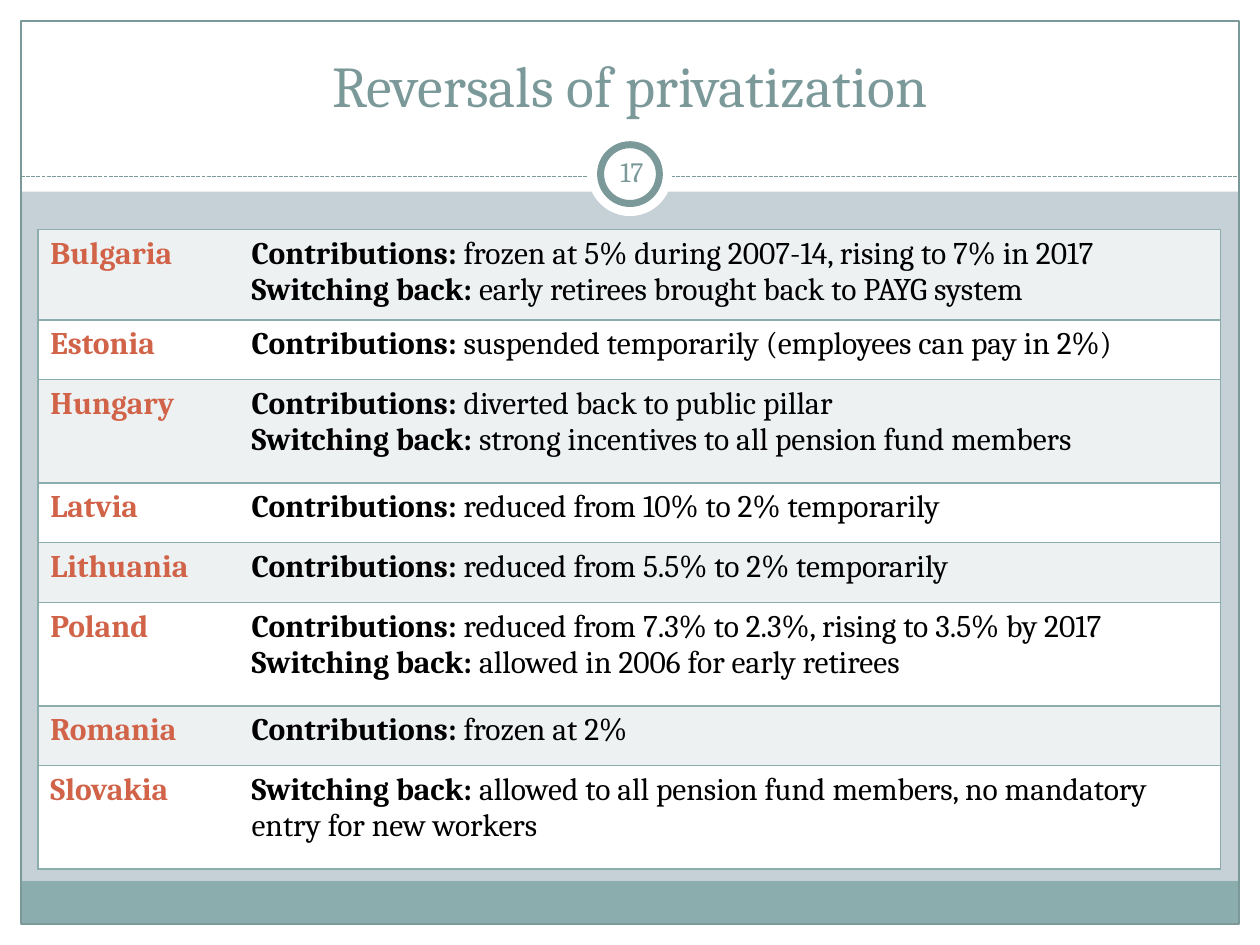
from lxml import etree
from pptx import Presentation
from pptx.dml.color import RGBColor
from pptx.enum import dml, shapes, text
from pptx.oxml import ns
from pptx.util import Pt

WHITE = RGBColor(0xFF, 0xFF, 0xFF)
BLACK = RGBColor(0, 0, 0)
BACKGROUND = RGBColor(0xC5, 0xD1, 0xD7)
TEAL = RGBColor(0x8C, 0xAD, 0xAE)
DARK_TEAL = RGBColor(0x7C, 0x99, 0x9A)
BAND = RGBColor(0xEE, 0xF1, 0xF2)
ORANGE = RGBColor(0xD1, 0x63, 0x49)
FONT = "Cambria"
W, H, EDGE = 720, 540, 12

CONTRIB, SWITCH = "Contributions: ", "Switching back: "
REVERSALS = [
    ("Bulgaria", 51.6, [(CONTRIB, "frozen at 5% during 2007-14, rising to 7% in 2017"),
                        (SWITCH, "early retirees brought back to PAYG system")]),
    ("Estonia", 34.2, [(CONTRIB, "suspended temporarily (employees can pay in 2%)")]),
    ("Hungary", 59, [(CONTRIB, "diverted back to public pillar"),
                     (SWITCH, "strong incentives to all pension fund members")]),
    ("Latvia", 34.2, [(CONTRIB, "reduced from 10% to 2% temporarily")]),
    ("Lithuania", 34.2, [(CONTRIB, "reduced from 5.5% to 2% temporarily")]),
    ("Poland", 59, [(CONTRIB, "reduced from 7.3% to 2.3%, rising to 3.5% by 2017"),
                    (SWITCH, "allowed in 2006 for early retirees")]),
    ("Romania", 34.2, [(CONTRIB, "frozen at 2%")]),
    ("Slovakia", 59, [(SWITCH, "allowed to all pension fund members, "
                               "no mandatory entry for new workers")]),
]


def add_run(p, words, size=18, color=BLACK, bold=False):
    r = p.add_run()
    r.text = words
    r.font.name, r.font.size, r.font.bold = FONT, Pt(size), bold
    r.font.color.rgb = color


def add_box(s, kind, x, y, w, h, fill=None, line=None, width=0.75):
    sp = s.shapes.add_shape(kind, Pt(x), Pt(y), Pt(w), Pt(h))
    sp.shadow.inherit = False
    if fill is None:
        sp.fill.background()
    else:
        sp.fill.solid()
        sp.fill.fore_color.rgb = fill
    if line is None:
        sp.line.fill.background()
    else:
        sp.line.color.rgb = line
        sp.line.width = Pt(width)
    return sp


def add_frame(s, x, y, w, h, header):
    """White margins and header, teal footer bar, thin outline and dashed rule."""
    rect = shapes.MSO_SHAPE.RECTANGLE
    for box in [(x, y + h - EDGE, w, EDGE), (x, y, w, header),
                (x, y, EDGE, h), (x + w - EDGE, y, EDGE, h)]:
        add_box(s, rect, *box, fill=WHITE)
    inner_w = w - 2 * EDGE
    add_box(s, rect, x + EDGE, y + h - EDGE - 24.5, inner_w, 24.5, fill=TEAL)
    add_box(s, rect, x + EDGE, y + EDGE, inner_w, h - 2 * EDGE, line=DARK_TEAL)

    rule_y = Pt(y + header - 8.7)
    rule = s.shapes.add_connector(shapes.MSO_CONNECTOR.STRAIGHT, Pt(x + EDGE), rule_y,
                                  Pt(x + w - EDGE), rule_y)
    rule.line.color.rgb, rule.line.width = DARK_TEAL, Pt(0.75)
    rule.line.dash_style = dml.MSO_LINE.SQUARE_DOT
    etree.SubElement(rule._element.spPr, ns.qn("a:effectLst"))


def add_page_number(s, x, y, size, number):
    oval = shapes.MSO_SHAPE.OVAL
    inset = 7.2
    ring = size - 2 * inset
    add_box(s, oval, x, y, size, size, fill=WHITE)
    add_box(s, oval, x + inset, y + inset, ring, ring, fill=WHITE, line=DARK_TEAL, width=4)
    tb = s.shapes.add_textbox(Pt(x + inset), Pt(y + 5), Pt(36), Pt(34.5))
    tf = tb.text_frame
    tf.word_wrap = True
    tf.vertical_anchor = text.MSO_ANCHOR.MIDDLE
    tf.margin_left = tf.margin_right = tf.margin_top = tf.margin_bottom = Pt(3.6)
    tf.paragraphs[0].alignment = text.PP_ALIGN.CENTER
    add_run(tf.paragraphs[0], number, size=16, color=DARK_TEAL)


def set_title(s, x, y, w, h, words):
    title = s.shapes.title
    title.left, title.top, title.width, title.height = Pt(x), Pt(y), Pt(w), Pt(h)
    title.text_frame.vertical_anchor = text.MSO_ANCHOR.MIDDLE
    p = title.text_frame.paragraphs[0]
    p.alignment = text.PP_ALIGN.CENTER
    add_run(p, words, size=33, color=DARK_TEAL)
    s.shapes[-1]._element.addnext(title._element)  # in front of the white header


def style_cell(cell, fill, open_side):
    """Rule every side but the open one, then fill; borders must precede the fill."""
    tc_pr = cell._tc.get_or_add_tcPr()
    for side in "LRTB":
        ln = etree.SubElement(tc_pr, ns.qn(f"a:ln{side}"), w=str(Pt(1)))
        if side == open_side:
            etree.SubElement(ln, ns.qn("a:noFill"))
        else:
            solid = etree.SubElement(ln, ns.qn("a:solidFill"))
            etree.SubElement(solid, ns.qn("a:srgbClr"), val=str(TEAL))
    cell.fill.solid()
    cell.fill.fore_color.rgb = fill


def add_reversals(s, x, y, w, country_w):
    heights = [height for _, height, _ in REVERSALS]
    frame = s.shapes.add_table(len(REVERSALS), 2, Pt(x), Pt(y), Pt(w), Pt(sum(heights)))
    table = frame.table
    table.first_row = table.horz_banding = False
    table.columns[0].width, table.columns[1].width = Pt(country_w), Pt(w - country_w)
    for i, (country, height, measures) in enumerate(REVERSALS):
        table.rows[i].height = Pt(height)
        name, details = table.cell(i, 0), table.cell(i, 1)
        for cell, open_side in ((name, "R"), (details, "L")):
            style_cell(cell, WHITE if i % 2 else BAND, open_side)
        add_run(name.text_frame.paragraphs[0], country, color=ORANGE, bold=True)
        tf = details.text_frame
        for j, (label, measure) in enumerate(measures):
            p = tf.add_paragraph() if j else tf.paragraphs[0]
            add_run(p, label, bold=True)
            add_run(p, measure)


def main():
    prs = Presentation()
    prs.slide_width, prs.slide_height = Pt(W), Pt(H)
    s = prs.slides.add_slide(prs.slide_layouts[5])
    s.background.fill.solid()
    s.background.fill.fore_color.rgb = BACKGROUND
    add_frame(s, 0, 0, W, H, header=109.5)
    set_title(s, 24, 18, W - 48, 60, "Reversals of privatization")
    add_page_number(s, W / 2 - 24, 75.5, 48, "17")
    add_reversals(s, 21.6, 131.2, 676, country_w=115)
    prs.save("out.pptx")


if __name__ == "__main__":
    main()
